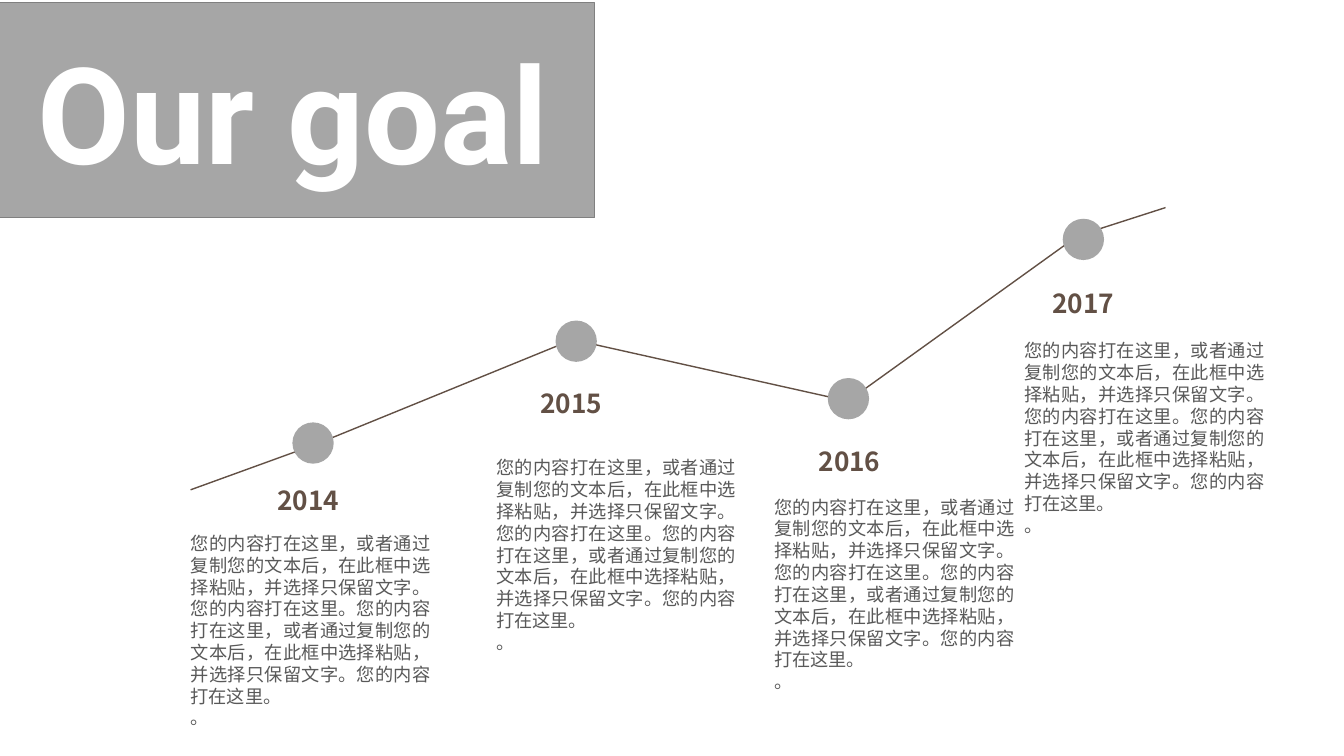
from lxml.etree import SubElement
from pptx import Presentation
from pptx.dml.color import RGBColor
from pptx.enum.shapes import MSO_SHAPE
from pptx.enum.text import MSO_ANCHOR, MSO_AUTO_SIZE, PP_ALIGN
from pptx.oxml.ns import qn
from pptx.util import Pt

PX = 9144  # 100 px to the inch
COLORS = {"gray": "A6A6A6", "edge": "808080", "brown": "625045",
          "text": "595959", "white": "FFFFFF"}
CJK = "Noto Sans CJK SC"
SENTENCE = "您的内容打在这里，或者通过复制您的文本后，在此框中选择粘贴，并选择只保留文字。您的内容打在这里。"
BODY = [SENTENCE * 2, "。"]
DOT = 41
YEAR_SIZE = (85, 42)
BODY_SIZE = (238, 197)

CHART_BOX = (189, 206, 1065, 519)
# Everything below is measured from the corner of CHART_BOX.
TREND = [(0, 280), (124, 235), (379, 131), (652, 192), (880, 28), (967, 0)]
MILESTONES = [  # year, dot, year label, body text
    ("2014", (101, 213), (76, 269), (0, 322)),
    ("2015", (362, 112), (337, 173), (303, 247)),
    ("2016", (632, 169), (613, 230), (579, 286)),
    ("2017", (865, 11), (845, 73), (827, 131)),
]


def color(name):
    return RGBColor.from_string(COLORS[name])


def emu(*lengths):
    return [n * PX for n in lengths]


def write(sp, lines, size, ink, font=CJK, bold=False, align=PP_ALIGN.LEFT,
          anchor=MSO_ANCHOR.TOP, wrap=False, inset=10, spacing=None):
    """Fill a shape with one paragraph per line, all in the same format."""
    tf = sp.text_frame
    tf.auto_size = MSO_AUTO_SIZE.NONE
    tf.word_wrap = wrap
    tf.vertical_anchor = anchor
    tf.margin_left = tf.margin_right = inset * PX
    tf.margin_top = tf.margin_bottom = inset // 2 * PX
    for i, line in enumerate(lines):
        p = tf.add_paragraph() if i else tf.paragraphs[0]
        p.alignment = align
        if spacing:
            p.line_spacing = Pt(spacing)
        r = p.add_run()
        r.text = line
        r.font.name, r.font.size, r.font.bold = font, Pt(size), bold
        r.font.color.rgb = color(ink)
        SubElement(r.font._element, qn("a:ea"), typeface=font)


def add_filled(s, preset, box, line=None):
    sp = s.shapes.add_shape(preset, *emu(*box))
    sp.shadow.inherit = False
    sp.fill.solid()
    sp.fill.fore_color.rgb = color("gray")
    if line:
        sp.line.color.rgb = color(line)
        sp.line.width = Pt(0.75)
    else:
        sp.line.fill.background()
    return sp


def add_banner(s, box, text):
    x, y, w, h = box
    title = s.shapes.title
    title.left, title.top, title.width, title.height = emu(x + 27, y + 21, w - 60, h - 41)
    write(title, [text], 96, "white", font="Roboto", bold=True,
          anchor=MSO_ANCHOR.MIDDLE)
    panel = add_filled(s, MSO_SHAPE.RECTANGLE, box, line="edge")
    title._element.addprevious(panel._element)


def add_trend(s, box, points):
    x, y = box[:2]
    (x0, y0), *rest = [(x + dx, y + dy) for dx, dy in points]
    path = s.shapes.build_freeform(x0, y0, scale=PX)
    path.add_line_segments(rest, close=False)
    sp = path.convert_to_shape()
    sp.shadow.inherit = False
    sp.fill.background()
    sp.line.color.rgb = color("brown")
    sp.line.width = Pt(1)


def add_milestone(s, box, year, dot, label, body):
    def at(offset, size):
        return box[0] + offset[0], box[1] + offset[1], *size

    add_filled(s, MSO_SHAPE.OVAL, at(dot, (DOT, DOT)))
    sp = s.shapes.add_textbox(*emu(*at(label, YEAR_SIZE)))
    write(sp, [year], 18.7, "brown", bold=True, spacing=23)
    sp = s.shapes.add_textbox(*emu(*at(body, BODY_SIZE)))
    write(sp, BODY, 13, "text", align=PP_ALIGN.JUSTIFY, wrap=True,
          inset=0, spacing=15.6)


def main():
    prs = Presentation()
    prs.slide_width, prs.slide_height = emu(1333, 750)
    s = prs.slides.add_slide(prs.slide_layouts[5])
    add_banner(s, (0, 3, 590, 213), "Our goal")
    add_trend(s, CHART_BOX, TREND)
    for milestone in MILESTONES:
        add_milestone(s, CHART_BOX, *milestone)
    prs.save("out.pptx")


if __name__ == "__main__":
    main()
